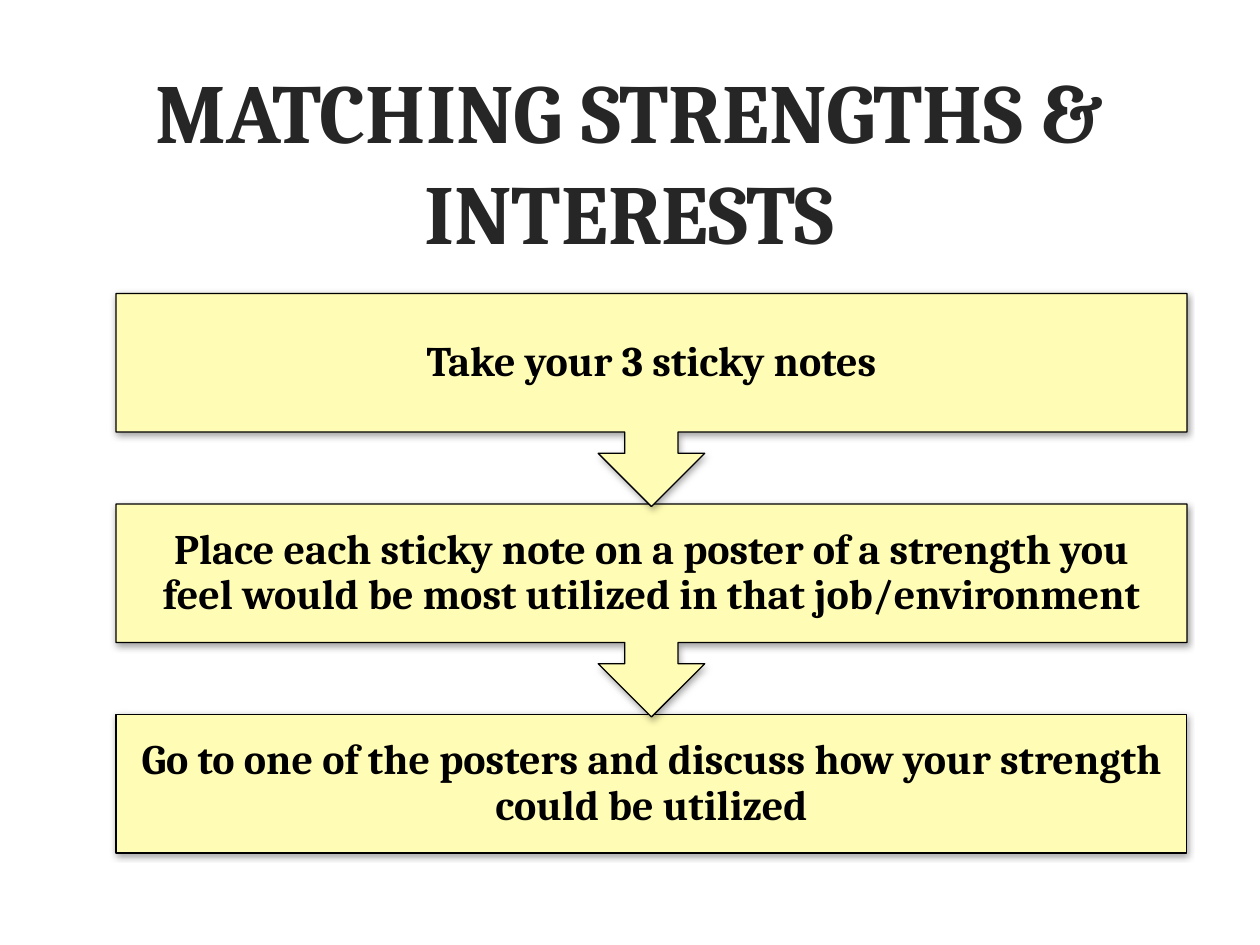
from pptx import Presentation
from pptx import oxml
from pptx import util as u
from pptx.dml import color
from pptx.enum import shapes, text
from pptx.oxml import ns

COLORS = {"title": "262626", "step": "FFFCB5", "ink": "000000"}
SHADOW = (
    f'<a:effectLst {ns.nsdecls("a")}>'
    '<a:outerShdw blurRad="50800" dist="12700" dir="5400000" rotWithShape="0">'
    f'<a:srgbClr val="{COLORS["ink"]}"><a:alpha val="37000"/></a:srgbClr>'
    '</a:outerShdw></a:effectLst>'
)


def add_label(wording, left, top, width, height, size, ink, insets, spacing):
    label = slide.shapes.add_textbox(*map(u.Inches, (left, top, width, height)))
    frame = label.text_frame
    frame.word_wrap = True
    frame.vertical_anchor = text.MSO_ANCHOR.MIDDLE
    frame.margin_left = frame.margin_right = u.Inches(insets[0])
    frame.margin_top = frame.margin_bottom = u.Inches(insets[1])
    paragraph = frame.paragraphs[0]
    paragraph.alignment = text.PP_ALIGN.CENTER
    paragraph.line_spacing = spacing
    run = paragraph.add_run()
    run.text = wording
    run.font.name = "Cambria"
    run.font.size = u.Pt(size)
    run.font.bold = True
    run.font.color.rgb = color.RGBColor.from_string(COLORS[ink])


prs = Presentation()
prs.slide_width, prs.slide_height = u.Inches(10), u.Inches(7.5)
slide = prs.slides.add_slide(prs.slide_layouts[6])

# Title
add_label("MATCHING STRENGTHS & INTERESTS", 0.6, 0.48, 8.79, 1.58,
          48, "title", (0.1, 0.05), 1.0)

# Steps, stacked from the bottom up so each arrow tip overlaps the next box
steps = [
    "Take your 3 sticky notes",
    "Place each sticky note on a poster of a strength you feel would be "
    "most utilized in that job/environment",
    "Go to one of the posters and discuss how your strength could be utilized",
]
left, first_top, pitch = 0.92, 2.33, 1.67
width, box_height, callout_height = 8.5, 1.1, 1.69

for index, wording in reversed(list(enumerate(steps))):
    top = first_top + index * pitch
    is_last = index == len(steps) - 1
    kind = (shapes.MSO_SHAPE.RECTANGLE if is_last
            else shapes.MSO_SHAPE.UP_ARROW_CALLOUT)
    height = box_height if is_last else callout_height
    step = slide.shapes.add_shape(
        kind, *map(u.Inches, (left, top, width, height)))
    if not is_last:
        step.rotation = 180
        for position, value in enumerate((0.25, 0.25, 0.25, 0.65)):
            step.adjustments[position] = value
    step.fill.solid()
    step.fill.fore_color.rgb = color.RGBColor.from_string(COLORS["step"])
    step.line.color.rgb = color.RGBColor.from_string(COLORS["ink"])
    step.line.width = u.Pt(0.75)
    # Soft shadow below the step
    step._element.spPr.append(oxml.parse_xml(SHADOW))
    add_label(wording, left, top, width, box_height,
              24, "ink", (0.19, 0.19), 0.9)

prs.save("out.pptx")
